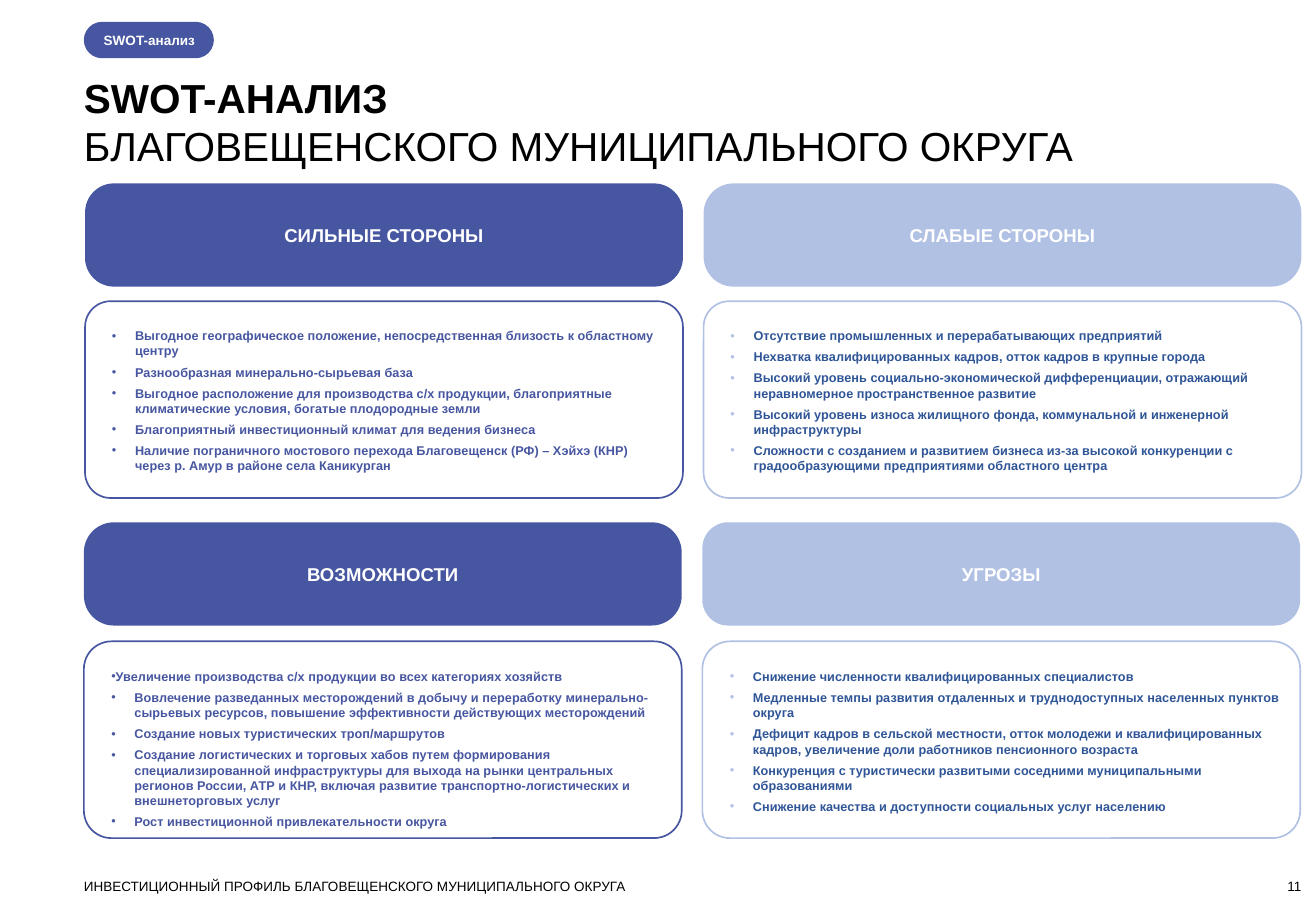
import pptx
import pptx.util
import pptx.dml.color
import pptx.enum.shapes
import pptx.enum.text
import pptx.oxml.ns
import lxml.etree

BLUE, PALE, NAVY = "4756A0", "B1C1E4", "2F5597"
WHITE, BLACK = "FFFFFF", "000000"
FONT = "Arial"

SLIDE_W, SLIDE_H = 1083, 750
CARD_W, HEAD_H, BODY_H = 492, 85, 162
MARGIN, COL_STEP = 69, 509
HEAD_TOPS, BODY_TOPS = (151, 430), (248, 528)
ROW_SHIFT = (1, 0)
BODY_ROUNDING = (0.13, 0.14)
BULLET_INDENT = 19

TITLE = ("SWOT-АНАЛИЗ", "БЛАГОВЕЩЕНСКОГО МУНИЦИПАЛЬНОГО ОКРУГА")
TAG = "SWOT-анализ"
FOOTER = "ИНВЕСТИЦИОННЫЙ ПРОФИЛЬ БЛАГОВЕЩЕНСКОГО МУНИЦИПАЛЬНОГО ОКРУГА"
PAGE = "11"

QUADRANTS = [
    ("СИЛЬНЫЕ СТОРОНЫ", 0.28, [
        "Выгодное географическое положение, непосредственная близость к областному центру",
        "Разнообразная минерально-сырьевая база",
        "Выгодное расположение для производства с/х продукции, благоприятные климатические условия, богатые плодородные земли",
        "Благоприятный инвестиционный климат для ведения бизнеса",
        "Наличие пограничного мостового перехода Благовещенск (РФ) – Хэйхэ (КНР) через р. Амур в районе села Каникурган",
    ]),
    ("СЛАБЫЕ СТОРОНЫ", 0.29, [
        "Отсутствие промышленных и перерабатывающих предприятий",
        "Нехватка квалифицированных кадров, отток кадров в крупные города",
        "Высокий уровень социально-экономической дифференциации, отражающий неравномерное пространственное развитие",
        "Высокий уровень износа жилищного фонда, коммунальной и инженерной инфраструктуры",
        "Сложности с созданием и развитием бизнеса из-за высокой конкуренции с градообразующими предприятиями областного центра",
    ]),
    ("ВОЗМОЖНОСТИ", 0.29, [
        "Увеличение производства с/х продукции во всех категориях хозяйств",
        "Вовлечение разведанных месторождений в добычу и переработку минерально-сырьевых ресурсов, повышение эффективности действующих месторождений",
        "Создание новых туристических троп/маршрутов",
        "Создание логистических и торговых хабов путем формирования специализированной инфраструктуры для выхода на рынки центральных регионов России, АТР и КНР, включая развитие транспортно-логистических и внешнеторговых услуг",
        "Рост инвестиционной привлекательности округа",
    ]),
    ("УГРОЗЫ", 0.25, [
        "Снижение численности квалифицированных специалистов",
        "Медленные темпы развития отдаленных и труднодоступных населенных пунктов округа",
        "Дефицит кадров в сельской местности, отток молодежи и квалифицированных кадров, увеличение доли работников пенсионного возраста",
        "Конкуренция с туристически развитыми соседними муниципальными образованиями",
        "Снижение качества и доступности социальных услуг населению",
    ]),
]
FLUSH_ITEM = QUADRANTS[2][2][0]

ALIGN = pptx.enum.text.PP_ALIGN
ANCHOR = pptx.enum.text.MSO_ANCHOR


def px(n):
    return pptx.util.Emu(n * 9144)


def rgb(color):
    return pptx.dml.color.RGBColor.from_string(color)


def set_frame(sp, anchor, insets):
    tf = sp.text_frame
    tf.word_wrap = True
    tf.vertical_anchor = anchor
    tf.margin_left, tf.margin_top, tf.margin_right, tf.margin_bottom = map(px, insets)


def add_card(box, rounding, fill=None, line=None, anchor=ANCHOR.MIDDLE, insets=(10, 5, 10, 5)):
    sp = slide.shapes.add_shape(pptx.enum.shapes.MSO_SHAPE.ROUNDED_RECTANGLE, *map(px, box))
    sp.shadow.inherit = False
    sp.adjustments[0] = rounding
    if fill:
        sp.fill.solid()
        sp.fill.fore_color.rgb = rgb(fill)
    else:
        sp.fill.background()
    if line:
        sp.line.color.rgb = rgb(line)
        sp.line.width = pptx.util.Pt(1)
    else:
        sp.line.fill.background()
    set_frame(sp, anchor, insets)
    return sp


def add_text(box, anchor=ANCHOR.TOP):
    sp = slide.shapes.add_textbox(*map(px, box))
    set_frame(sp, anchor, (0, 0, 0, 0))
    return sp


def write(sp, lines, size, color, bold=False, align=ALIGN.LEFT):
    tf = sp.text_frame
    for i, line in enumerate(lines):
        p = tf.add_paragraph() if i else tf.paragraphs[0]
        p.text = line
        p.alignment = align
        p.font.name = FONT
        p.font.size = pptx.util.Pt(size)
        p.font.bold = bold
        p.font.color.rgb = rgb(color)
    return tf.paragraphs


def add_bullet(p, color, left):
    pPr = p._p.get_or_add_pPr()
    pPr.set("marL", str(px(left)))
    pPr.set("indent", str(px(-BULLET_INDENT)))
    qn = pptx.oxml.ns.qn
    buClr = lxml.etree.Element(qn("a:buClr"))
    lxml.etree.SubElement(buClr, qn("a:srgbClr"), val=color)
    buFont = lxml.etree.Element(qn("a:buFont"), typeface=FONT)
    buChar = lxml.etree.Element(qn("a:buChar"), char="•")
    defRPr = pPr.find(qn("a:defRPr"))
    for el in (buClr, buFont, buChar):
        defRPr.addprevious(el)


def add_quadrant(index, heading, rounding, items):
    row, col = divmod(index, 2)
    left = MARGIN + ROW_SHIFT[row] + col * COL_STEP
    tint, ink, right_inset = ((BLUE, BLUE, 16), (PALE, NAVY, 10))[col]
    body = add_card((left, BODY_TOPS[row], CARD_W, BODY_H), BODY_ROUNDING[row],
                    line=tint, anchor=ANCHOR.TOP, insets=(16, 16, right_inset, 5))
    for i, p in enumerate(write(body, items, 7.5, ink, True)):
        if i:
            p.space_before = pptx.util.Pt(3.5)
        add_bullet(p, tint, 0 if p.text == FLUSH_ITEM else BULLET_INDENT)
    head = add_card((left, HEAD_TOPS[row], CARD_W, HEAD_H), rounding, fill=tint)
    write(head, [heading], 11, WHITE, True, ALIGN.CENTER)


prs = pptx.Presentation()
prs.slide_width, prs.slide_height = px(SLIDE_W), px(SLIDE_H)
slide = prs.slides.add_slide(prs.slide_layouts[6])

for index, quadrant in enumerate(QUADRANTS):
    add_quadrant(index, *quadrant)

tag = add_card((MARGIN, 18, 107, 30), 0.5, fill=BLUE, insets=(12, 0, 0, 0))
write(tag, [TAG], 8, WHITE, True)

title = write(add_text((MARGIN, 60, 1002, 81)), TITLE, 24, BLACK)
title[0].font.bold = True

write(add_text((MARGIN, 723, 800, 13)), [FOOTER], 8, BLACK)
write(add_text((991, 723, 80, 13), ANCHOR.BOTTOM), [PAGE], 8, BLACK, align=ALIGN.RIGHT)

prs.save("out.pptx")
